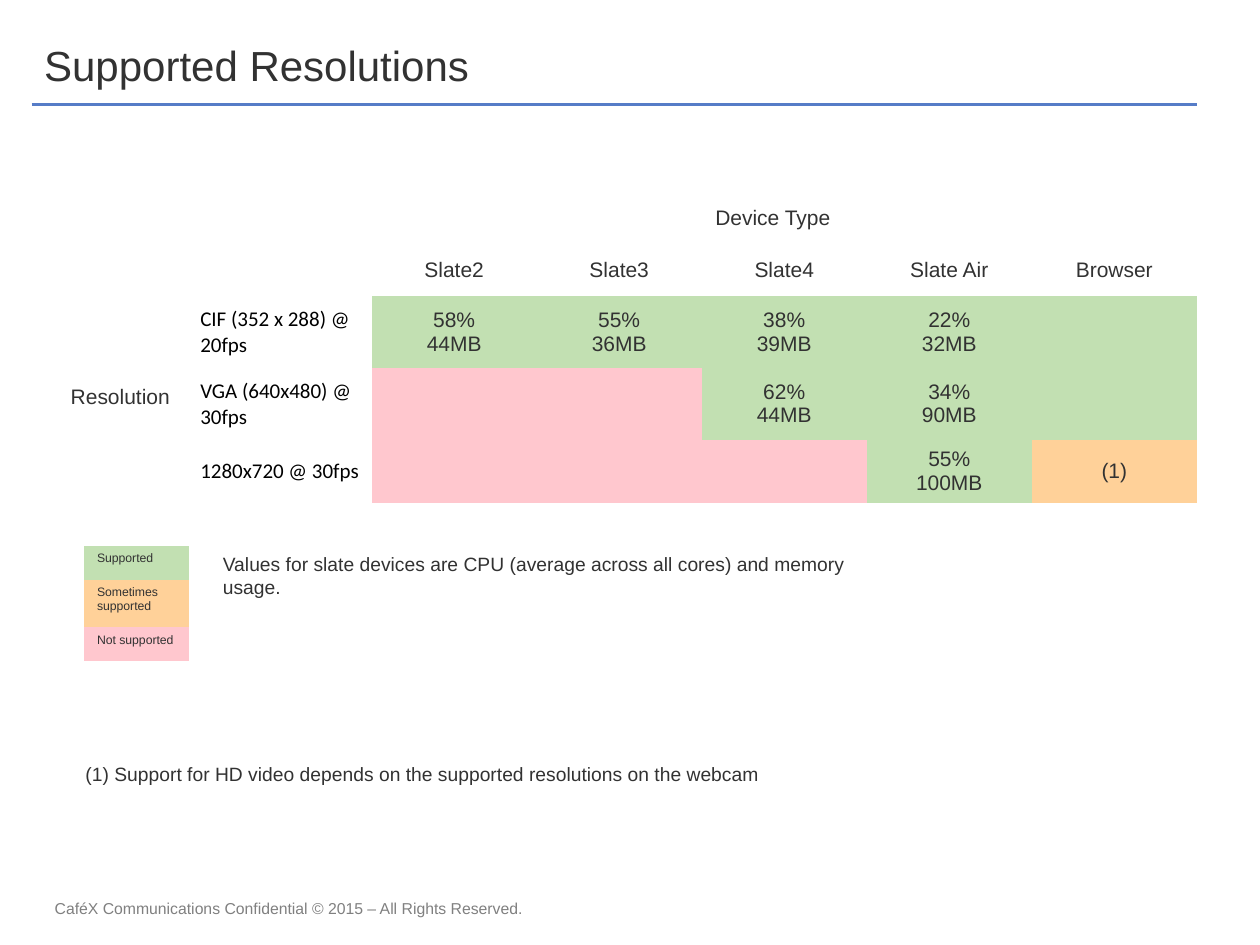
"""Build the supported resolutions slide."""
from pptx import Presentation
from pptx.dml.color import RGBColor
from pptx.enum.shapes import MSO_CONNECTOR
from pptx.enum.text import MSO_ANCHOR, PP_ALIGN
from pptx.oxml.ns import qn
from pptx.util import Inches, Pt

INK = RGBColor(0x32, 0x32, 0x32)
BLACK = RGBColor(0, 0, 0)
GRAY = RGBColor(0x80, 0x80, 0x80)
BLUE = RGBColor(0x56, 0x7C, 0xC7)
GREEN = RGBColor(0xC2, 0xE0, 0xB2)
ORANGE = RGBColor(0xFF, 0xD1, 0x99)
PINK = RGBColor(0xFF, 0xC7, 0xCE)

PLAIN_TABLE = "{2D5ABB26-0587-4C30-8999-92F81FD0307C}"
LABEL_FORMAT = {"margin_left": Inches(0.01), "margin_right": Inches(0.01),
                "margin_top": Inches(0.01), "margin_bottom": 0}
FOOTER_FORMAT = dict.fromkeys(
    ("margin_left", "margin_right", "margin_top", "margin_bottom"), 0)

DEVICES = ["Slate2", "Slate3", "Slate4", "Slate Air", "Browser"]
RESOLUTIONS = [
    ("CIF (352 x 288) @ 20fps",
     ["58%\n44MB", "55%\n36MB", "38%\n39MB", "22%\n32MB", ""],
     [GREEN] * 5),
    ("VGA (640x480) @ 30fps",
     ["", "", "62%\n44MB", "34%\n90MB", ""],
     [PINK] * 2 + [GREEN] * 3),
    ("1280x720 @ 30fps",
     ["", "", "", "55%\n100MB", "(1)"],
     [PINK] * 3 + [GREEN, ORANGE]),
]
LEGEND = [("Supported", GREEN), ("Sometimes supported", ORANGE), ("Not supported", PINK)]


def apply_format(target, values):
    for name, value in values.items():
        setattr(target, name, value)


class SlideBuilder:
    def __init__(self, slide, font_name="Arial", color=INK):
        self.slide = slide
        self.font_name = font_name
        self.color = color

    def fill_text(self, text_frame, text, size, alignment=PP_ALIGN.LEFT,
                  color=None, font_name=None):
        text_frame.text = text
        for paragraph in text_frame.paragraphs:
            paragraph.alignment = alignment
            for run in paragraph.runs:
                apply_format(run.font, {"size": Pt(size), "name": font_name or self.font_name})
                run.font.color.rgb = color or self.color

    def title(self, text, left, top, width, height):
        shape = self.slide.shapes.title
        apply_format(shape, {"left": Inches(left), "top": Inches(top),
                             "width": Inches(width), "height": Inches(height)})
        apply_format(shape.text_frame, {"vertical_anchor": MSO_ANCHOR.TOP, "word_wrap": True})
        self.fill_text(shape.text_frame, text, 24)

    def text(self, text, left, top, width, height, size=11, frame_format=None, **style):
        shape = self.slide.shapes.add_textbox(
            Inches(left), Inches(top), Inches(width), Inches(height))
        apply_format(shape.text_frame, frame_format or {})
        self.fill_text(shape.text_frame, text, size, **style)

    def rule(self, left, right, top):
        connector = self.slide.shapes.add_connector(
            MSO_CONNECTOR.STRAIGHT, Inches(left), Inches(top), Inches(right), Inches(top))
        connector.line.color.rgb = BLUE
        connector.line.width = Pt(1.75)
        properties = connector.element.spPr
        properties.append(properties.makeelement(qn("a:effectLst"), {}))

    def table(self, left, top, widths, heights):
        shape = self.slide.shapes.add_table(
            len(heights), len(widths), Inches(left), Inches(top),
            Inches(sum(widths)), Inches(sum(heights)))
        for style in shape.element.iter(qn("a:tableStyleId")):
            style.text = PLAIN_TABLE
        table = shape.table
        apply_format(table, {"first_row": False, "horz_banding": False})
        for column, width in zip(table.columns, widths):
            column.width = Inches(width)
        for row, height in zip(table.rows, heights):
            row.height = Inches(height)
        return table

    def cell(self, cell, text, fill=None, size=12, alignment=PP_ALIGN.CENTER,
             anchor=MSO_ANCHOR.MIDDLE, cell_format=None, **style):
        if fill is None:
            cell.fill.background()
        else:
            cell.fill.solid()
            cell.fill.fore_color.rgb = fill
        apply_format(cell, {"vertical_anchor": anchor, **(cell_format or {})})
        self.fill_text(cell.text_frame, text, size, alignment, **style)

    def resolution_table(self):
        table = self.table(0.33, 1.53, [1.25, 1.37] + [1.31] * 5, [0.41, 0.41, 0.57, 0.57, 0.5])
        table.cell(0, 1).merge(table.cell(0, 6))
        table.cell(1, 0).merge(table.cell(4, 0))
        self.cell(table.cell(0, 1), "Device Type", cell_format={"margin_left": Inches(1.29)})
        self.cell(table.cell(1, 0), "Resolution", cell_format={"margin_top": Inches(0.43)})
        for column, device in enumerate(DEVICES, 2):
            self.cell(table.cell(1, column), device)
        for row, (label, values, fills) in enumerate(RESOLUTIONS, 2):
            self.cell(table.cell(row, 1), label, alignment=PP_ALIGN.LEFT,
                      cell_format=LABEL_FORMAT, color=BLACK, font_name="Calibri")
            for column, (value, fill) in enumerate(zip(values, fills), 2):
                self.cell(table.cell(row, column), value, fill)

    def legend(self):
        table = self.table(0.67, 4.33, [0.83], [0.27, 0.38, 0.27])
        for row, (label, fill) in enumerate(LEGEND):
            self.cell(table.cell(row, 0), label, fill, 7, PP_ALIGN.LEFT, MSO_ANCHOR.TOP)


def main():
    presentation = Presentation()
    apply_format(presentation, {"slide_width": Inches(10), "slide_height": Inches(7.5)})
    builder = SlideBuilder(presentation.slides.add_slide(presentation.slide_layouts[5]))
    builder.text("CaféX Communications Confidential © 2015 – All Rights Reserved.",
                 0.25, 7.13, 4.08, 0.17, 9, FOOTER_FORMAT,
                 alignment=PP_ALIGN.CENTER, color=GRAY)
    builder.rule(0.25, 9.5, 0.83)
    builder.title("Supported Resolutions", 0.25, 0.26, 7.58, 0.91)
    builder.resolution_table()
    builder.text("(1) Support for HD video depends on the supported resolutions on the webcam",
                 0.58, 6, 5.62, 0.29)
    builder.legend()
    builder.text("Values for slate devices are CPU (average across all cores) and memory usage.",
                 1.67, 4.33, 5.61, 0.29)
    presentation.save("out.pptx")


if __name__ == "__main__":
    main()
